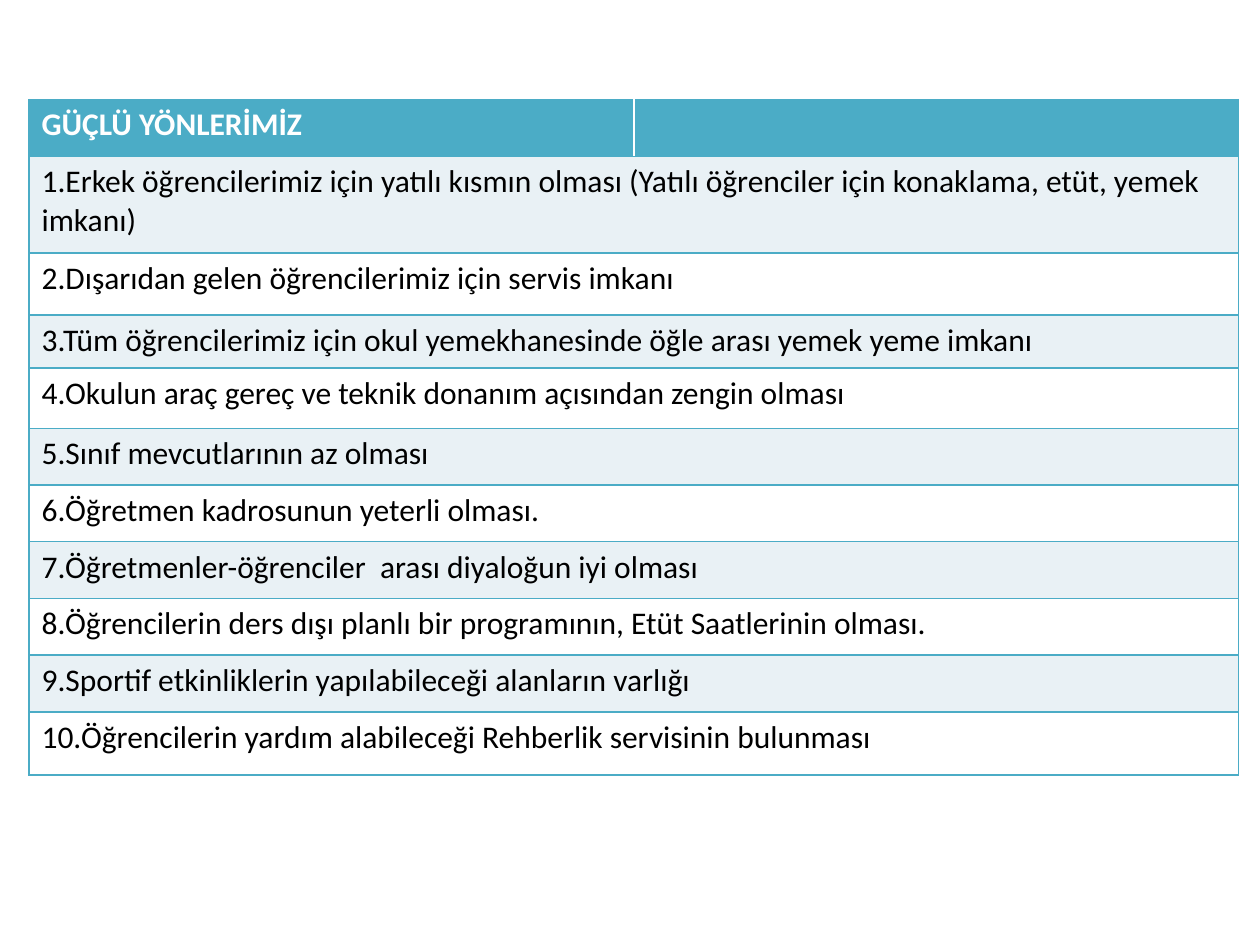
from lxml import etree
from pptx import Presentation
from pptx.dml.color import RGBColor
from pptx.oxml.ns import qn
from pptx.util import Inches, Pt

BLANK = 6
FONT = "Calibri"
COLORS = {"teal": "4BACC6", "pale": "E9F1F5", "white": "FFFFFF", "black": "000000"}
HEAD = "GÜÇLÜ YÖNLERİMİZ"
ITEMS = [
    "Erkek öğrencilerimiz için yatılı kısmın olması (Yatılı öğrenciler için konaklama, etüt, yemek imkanı)",
    "Dışarıdan gelen öğrencilerimiz için servis imkanı",
    "Tüm öğrencilerimiz için okul yemekhanesinde öğle arası yemek yeme imkanı",
    "Okulun araç gereç ve teknik donanım açısından zengin olması",
    "Sınıf mevcutlarının az olması",
    "Öğretmen kadrosunun yeterli olması.",
    "Öğretmenler-öğrenciler  arası diyaloğun iyi olması",
    "Öğrencilerin ders dışı planlı bir programının, Etüt Saatlerinin olması.",
    "Sportif etkinliklerin yapılabileceği alanların varlığı",
    "Öğrencilerin yardım alabileceği Rehberlik servisinin bulunması",
]
ROWS = [0.45, 0.77, 0.49, 0.42, 0.48] + [0.45] * 5 + [0.5]
COL = 4.8


def add_edges(cell, sides):
    props = cell._tc.get_or_add_tcPr()
    for spot, side in enumerate(sides):
        line = etree.Element(qn(f"a:ln{side}"), w=str(Pt(1)))
        fill = etree.SubElement(line, qn("a:solidFill"))
        etree.SubElement(fill, qn("a:srgbClr"), val=COLORS["teal"])
        props.insert(spot, line)


def paint(cell, fill, sides):
    cell.fill.solid()
    cell.fill.fore_color.rgb = RGBColor.from_string(COLORS[fill])
    add_edges(cell, sides)


def write(cell, text, color, bold=False):
    run = cell.text_frame.paragraphs[0].add_run()
    run.text = text
    run.font.name = FONT
    run.font.size = Pt(18)
    run.font.bold = bold
    run.font.color.rgb = RGBColor.from_string(COLORS[color])


def add_grid(slide):
    frame = slide.shapes.add_table(
        len(ROWS), 2, Inches(0.23), Inches(0.79), Inches(2 * COL), Inches(sum(ROWS))
    )
    grid = frame.table
    for col in grid.columns:
        col.width = Inches(COL)
    for row, height in zip(grid.rows, ROWS):
        row.height = Inches(height)
    return grid


def fill_head(grid):
    left, right = grid.rows[0].cells
    paint(left, "teal", "LTB")
    paint(right, "teal", "RTB")
    write(left, HEAD, "white", True)


def fill_items(grid):
    for num, item in enumerate(ITEMS, 1):
        left, right = grid.rows[num].cells
        left.merge(right)
        for cell in (left, right):
            paint(cell, "pale" if num % 2 else "white", "LRTB")
        write(left, f"{num}.{item}", "black")


def main():
    deck = Presentation()
    deck.slide_width = Inches(10)
    deck.slide_height = Inches(7.5)
    slide = deck.slides.add_slide(deck.slide_layouts[BLANK])
    grid = add_grid(slide)
    fill_head(grid)
    fill_items(grid)
    deck.save("out.pptx")


if __name__ == "__main__":
    main()
